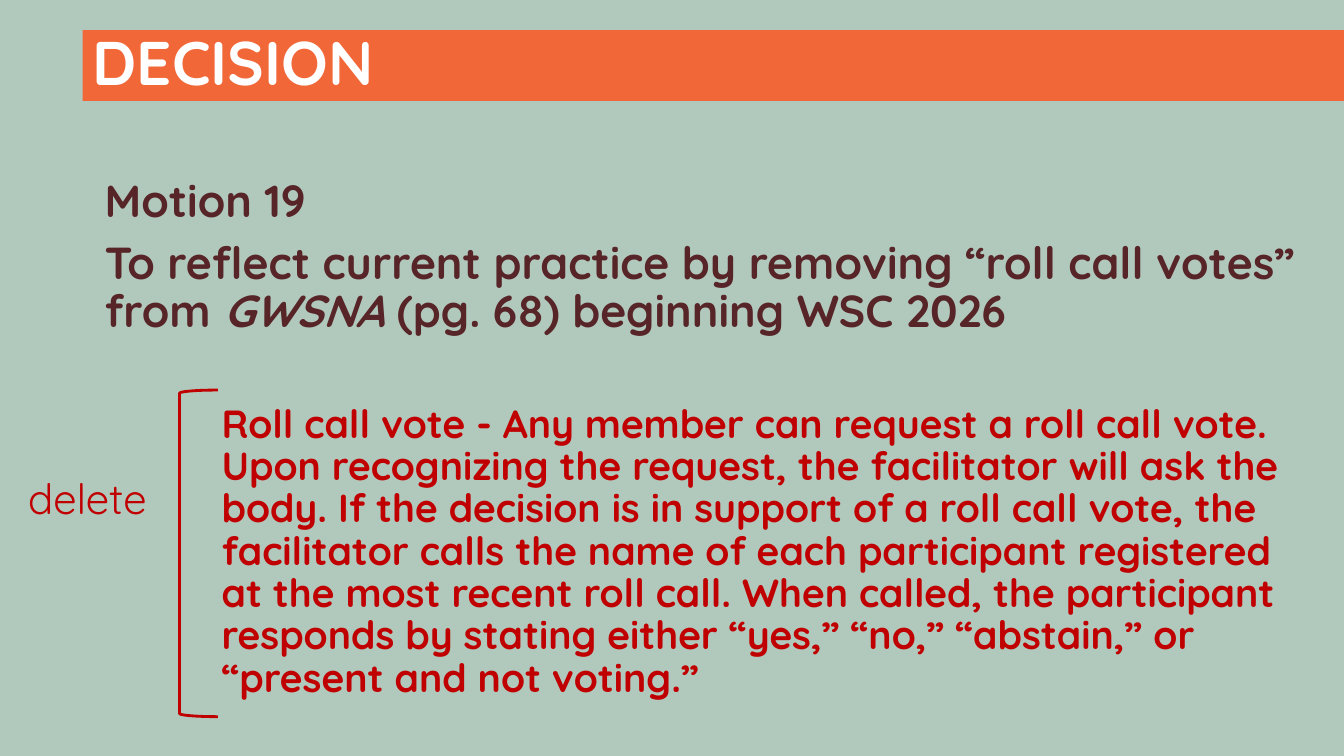
"""Build the Motion 19 decision slide."""
from pptx import Presentation
from pptx.dml.color import RGBColor
from pptx.enum.shapes import MSO_SHAPE
from pptx.enum.text import MSO_ANCHOR, MSO_AUTO_SIZE, PP_ALIGN
from pptx.util import Inches, Pt

LEFT_BRACKET = MSO_SHAPE.LEFT_BRACKET
TOP, MIDDLE = MSO_ANCHOR.TOP, MSO_ANCHOR.MIDDLE
NO_AUTOFIT = MSO_AUTO_SIZE.NONE
LEFT = PP_ALIGN.LEFT

FONT = "Quicksand"
COLORS = {
    "background": "B1C9BD",
    "banner": "F16737",
    "title": "FFFFFF",
    "motion": "572528",
    "deletion": "C00000",
}
MOTION = [
    [("Motion 19", False)],
    [
        ("To reflect current practice by removing “roll call votes” from ", False),
        ("GWSNA", True),
        (" (pg. 68) beginning WSC 2026", False),
    ],
]
ROLL_CALL = (
    "Roll call vote - Any member can request a roll call vote. "
    "Upon recognizing the request, the facilitator will ask the body. "
    "If the decision is in support of a roll call vote, the facilitator calls "
    "the name of each participant registered at the most recent roll call. "
    "When called, the participant responds by stating either “yes,” “no,” "
    "“abstain,” or “present and not voting.”"
)


class DecisionSlide:
    """Hold the style and the current slide."""

    def __init__(self, slide):
        self.slide = slide
        self.paint(slide.background.fill, "background")

    def paint(self, fill, color):
        fill.solid()
        fill.fore_color.rgb = RGBColor.from_string(COLORS[color])

    def fill_text(self, frame, paragraphs, size, color, bold, anchor=TOP, indent=0):
        frame.word_wrap = True
        frame.auto_size = NO_AUTOFIT
        frame.vertical_anchor = anchor
        for index, runs in enumerate(paragraphs):
            paragraph = frame.add_paragraph() if index else frame.paragraphs[0]
            paragraph.alignment = LEFT
            paragraph.line_spacing = 0.9
            if index:
                paragraph.space_before = Pt(10)
            if indent:
                properties = paragraph._p.get_or_add_pPr()
                properties.set("marL", str(Inches(indent)))
                properties.set("indent", "0")
            font = paragraph.font
            font.name, font.size, font.bold = FONT, Pt(size), bold
            font.color.rgb = RGBColor.from_string(COLORS[color])
            for words, italic in runs:
                run = paragraph.add_run()
                run.text = words
                if italic:
                    run.font.italic = True

    def title(self, words, left, top, width, height):
        banner = self.slide.shapes.title
        banner.left, banner.top = Inches(left), Inches(top)
        banner.width, banner.height = Inches(width), Inches(height)
        self.paint(banner.fill, "banner")
        self.fill_text(banner.text_frame, [[(words, False)]], 44, "title", True, MIDDLE)

    def text(self, box, paragraphs, size, color, bold=True, indent=0):
        frame = self.slide.shapes.add_textbox(*map(Inches, box)).text_frame
        self.fill_text(frame, paragraphs, size, color, bold, indent=indent)

    def bracket(self, box, color):
        bracket = self.slide.shapes.add_shape(LEFT_BRACKET, *map(Inches, box))
        bracket.shadow.inherit = False
        bracket.fill.background()
        bracket.line.color.rgb = RGBColor.from_string(COLORS[color])
        bracket.line.width = Pt(2)


def main():
    deck = Presentation()
    deck.slide_width, deck.slide_height = Inches(13.33), Inches(7.5)
    decision = DecisionSlide(deck.slides.add_slide(deck.slide_layouts[5]))
    decision.title("DECISION", 0.82, 0.3, 12.51, 0.7)
    decision.text((0.18, 4.69, 1.73, 0.68), [[("delete", False)]], 30, "deletion", bold=False)
    decision.bracket((1.78, 3.87, 0.38, 3.24), "deletion")
    decision.text((0.94, 1.72, 12.14, 1.64), MOTION, 32, "motion")
    decision.text((1.5, 3.96, 11.54, 3.69), [[(ROLL_CALL, False)]], 28, "deletion", indent=0.6)
    deck.save("out.pptx")


if __name__ == "__main__":
    main()
